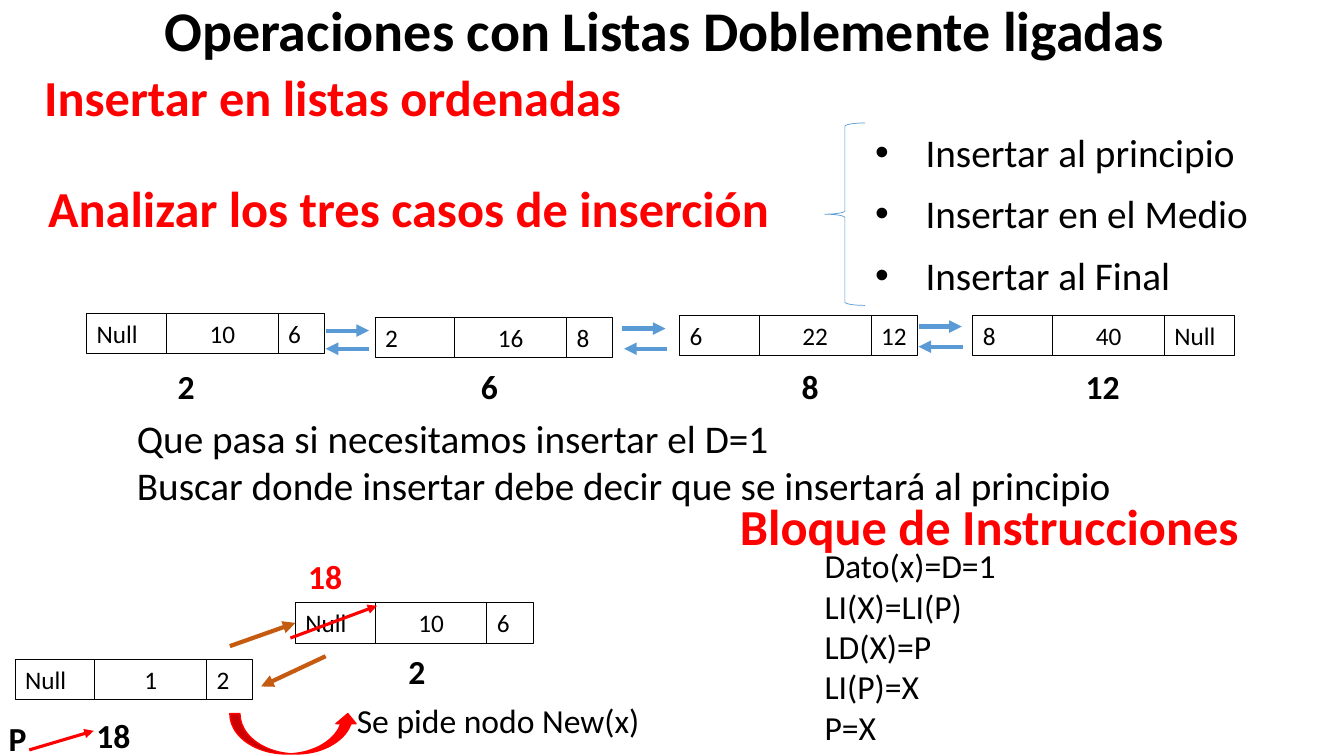
from pptx import Presentation
from pptx import util as u
from pptx.dml.color import RGBColor
from pptx.enum import shapes, text
from pptx.oxml.ns import qn
from lxml import etree

BLACK = RGBColor(0, 0, 0)
RED = RGBColor(0xFF, 0, 0)
BLUE = RGBColor(0x5B, 0x9B, 0xD5)
RUST = RGBColor(0xC5, 0x5A, 0x11)
FONT = "Calibri"
MID = text.PP_ALIGN.CENTER

TITLE = "Operaciones con Listas Doblemente ligadas"
CASES = ["Insertar al principio", "Insertar en el Medio", "Insertar al Final"]
# left, top, width, height, text
HEADS = [
    (0.34, 0.61, 6.68, 0.71, "Insertar en listas ordenadas"),
    (0.38, 1.71, 10.03, 0.71, "Analizar los tres casos de inserción"),
    (7.24, 4.86, 6.68, 0.71, "Bloque de Instrucciones"),
]
# left, top, width, height, size, lines
NOTES = [
    (1.26, 4.06, 11.24, 1.04, 28,
     ["Que pasa si necesitamos insertar el D=1",
      "Buscar donde insertar debe decir que se insertará al principio"]),
    (3.44, 6.89, 3.68, 0.5, 24, ["Se pide nodo New(x)"]),
    (8.08, 5.36, 2, 2.12, 24,
     ["Dato(x)=D=1", "LI(X)=LI(P)", "LD(X)=P", "LI(P)=X", "P=X"]),
]
# left, top, (left link, data, right link), width of the last cell
NODES = [
    (0.86, 3.11, ("Null", "10", "6"), 0.46),
    (3.72, 3.15, ("2", "16", "8"), 0.46),
    (6.74, 3.13, ("6", "22", "12"), 0.46),
    (9.65, 3.13, ("8", "40", "Null"), 0.69),
    (0.15, 6.54, ("Null", "1", "2"), 0.46),
    (2.93, 5.98, ("Null", "10", "6"), 0.46),
]
# left, top, text, colour
TAGS = [
    (1.49, 3.58, "2", BLACK), (4.5, 3.58, "6", BLACK),
    (7.68, 3.58, "8", BLACK), (10.58, 3.58, "12", BLACK),
    (3.78, 6.41, "2", BLACK), (0.77, 7.04, "18", BLACK),
    (-0.18, 7.07, "P", BLACK), (2.87, 5.47, "18", RED),
]
# start x, start y, end x, end y, colour, weight
LINKS = [
    (3.23, 3.28, 3.66, 3.28, BLUE, 3), (3.66, 3.46, 3.23, 3.46, BLUE, 3),
    (6.17, 3.26, 6.6, 3.26, BLUE, 3), (6.62, 3.46, 6.19, 3.46, BLUE, 3),
    (9.11, 3.24, 9.54, 3.24, BLUE, 3), (9.55, 3.44, 9.11, 3.44, BLUE, 3),
    (3.23, 6.51, 2.59, 6.81, RUST, 3),
    (0.29, 7.44, 0.93, 7.25, RED, 2.25),
    (2.88, 6.33, 3.74, 6.01, RED, 2.25),
]

deck = Presentation()
deck.slide_width, deck.slide_height = u.Inches(13.33), u.Inches(7.5)
slide = deck.slides.add_slide(deck.slide_layouts[1])
items = slide.shapes


def place(shape, *box):
    shape.left, shape.top, shape.width, shape.height = map(u.Inches, box)


def write(shape, lines, size=24, color=BLACK, bold=False,
          align=text.PP_ALIGN.LEFT, gap=0, bullet=False):
    frame = shape.text_frame
    frame.word_wrap = True
    frame.auto_size = text.MSO_AUTO_SIZE.NONE
    frame.vertical_anchor = text.MSO_ANCHOR.TOP
    frame.text = "\n".join(lines)
    for i, para in enumerate(frame.paragraphs):
        para.alignment = align
        para.line_spacing = 1.0
        para.space_before = u.Pt(gap if i else 0)
        if bullet:
            props = para._p.get_or_add_pPr()
            props.set("marL", str(u.Inches(0.5)))
            props.set("indent", str(u.Inches(-0.5)))
            etree.SubElement(props, qn("a:buFont"), typeface="Arial")
            etree.SubElement(props, qn("a:buChar"), char="•")
        for run in para.runs:
            font = run.font
            font.name, font.size, font.bold = FONT, u.Pt(size), bold
            font.color.rgb = color


def label(box, lines, **style):
    write(items.add_textbox(*map(u.Inches, box)), lines, **style)


def form(kind, box, line, weight, fill=None):
    shape = items.add_shape(kind, *map(u.Inches, box))
    shape.shadow.inherit = False
    if fill is None:
        shape.fill.background()
    else:
        shape.fill.solid()
        shape.fill.fore_color.rgb = fill
    shape.line.color.rgb = line
    shape.line.width = u.Pt(weight)
    return shape


def node(left, top, words, last):
    """Draw the three cells of a list node and return the first one."""
    cells = []
    for word, width in zip(words, (0.79, 1.11, last)):
        cell = form(shapes.MSO_SHAPE.RECTANGLE, (left, top, width, 0.4),
                    BLACK, 0.75)
        align = MID if len(cells) == 1 else text.PP_ALIGN.LEFT
        write(cell, [word], size=18, align=align)
        cells.append(cell)
        left += width
    return cells[0]


def arrow(x1, y1, x2, y2, color, weight):
    link = items.add_connector(shapes.MSO_CONNECTOR.STRAIGHT,
                               *map(u.Inches, (x1, y1, x2, y2)))
    link.line.color.rgb = color
    link.line.width = u.Pt(weight)
    etree.SubElement(link.line._get_or_add_ln(), qn("a:tailEnd"),
                     type="triangle")
    etree.SubElement(link._element.spPr, qn("a:effectLst"))
    return link


def main():
    title, body = items.title, items.placeholders[1]
    place(title, 1.53, -0.09, 10.94, 0.77)
    write(title, [TITLE], size=40, bold=True)
    place(body, 8.58, 1.22, 4.4, 1.81)
    write(body, CASES, size=28, gap=10.5, bullet=True)

    for *box, head in HEADS:
        label(box, [head], size=36, color=RED, bold=True)
    for *box, size, lines in NOTES:
        label(box, lines, size=size)
    form(shapes.MSO_SHAPE.LEFT_BRACE, (8.18, 1.22, 0.4, 1.81), BLUE, 0.5)
    form(shapes.MSO_SHAPE.CURVED_UP_ARROW, (2.28, 7.08, 1.27, 0.4),
         RED, 1, fill=RED)

    firsts = [node(*row) for row in NODES]
    for left, top, word, color in TAGS:
        label((left, top, 0.71, 0.5), [word], color=color, bold=True,
              align=MID)
    for row in LINKS:
        arrow(*row)
    arrow(2.28, 6.41, 2.93, 6.18, RUST, 3).end_connect(firsts[-1], 1)
    deck.save("out.pptx")


if __name__ == "__main__":
    main()
